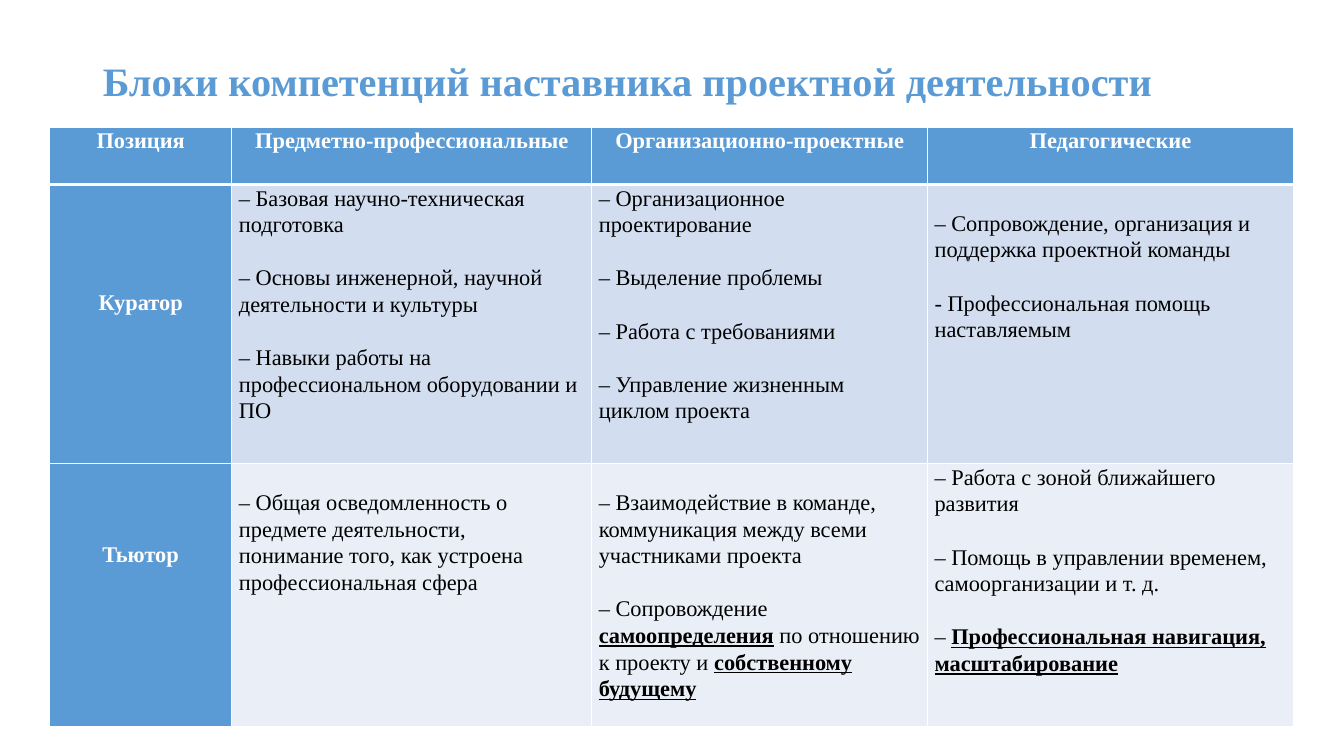
from lxml.etree import SubElement
from pptx import Presentation
from pptx.dml.color import RGBColor
from pptx.enum.text import MSO_ANCHOR, PP_ALIGN
from pptx.oxml.ns import qn
from pptx.util import Inches, Pt

BLUE = RGBColor(0x5B, 0x9B, 0xD5)
PALE_BLUE = RGBColor(0xD2, 0xDE, 0xEF)
PALEST_BLUE = RGBColor(0xEA, 0xEF, 0xF7)
WHITE = RGBColor(0xFF, 0xFF, 0xFF)
BLACK = RGBColor(0, 0, 0)
FONT = "Times New Roman"

COLUMN_WIDTHS = [1.81, 3.57, 3.33, 3.63]
ROW_HEIGHTS = [0.57, 2.77, 2.61]
ROW_FILLS = [BLUE, PALE_BLUE, PALEST_BLUE]
TOP_MARGINS = [[0, 0, 0, 0], [1.04, 0, 0, 0.25], [0.77, 0.25, 0.25, 0]]

# Asterisks enclose the emphasised words.
COMPETENCIES = [
    [
        ["Позиция"],
        ["Предметно-профессиональные"],
        ["Организационно-проектные"],
        ["Педагогические"],
    ],
    [
        ["Куратор"],
        [
            "– Базовая научно-техническая подготовка",
            "– Основы инженерной, научной деятельности и культуры",
            "– Навыки работы на профессиональном оборудовании и ПО",
        ],
        [
            "– Организационное проектирование",
            "– Выделение проблемы",
            "– Работа с требованиями",
            "– Управление жизненным циклом проекта",
        ],
        [
            "– Сопровождение, организация и поддержка проектной команды",
            "- Профессиональная помощь наставляемым",
        ],
    ],
    [
        ["Тьютор"],
        [
            "– Общая осведомленность о предмете деятельности,",
            "понимание того, как устроена профессиональная сфера",
        ],
        [
            "– Взаимодействие в команде, коммуникация между всеми участниками проекта",
            "– Сопровождение *самоопределения* по отношению к проекту и *собственному будущему*",
        ],
        [
            "– Работа с зоной ближайшего развития",
            "– Помощь в управлении временем, самоорганизации и т. д.",
            "– *Профессиональная навигация, масштабирование*",
        ],
    ],
]


def add_run(paragraph, text, size, color, bold, underline=False):
    run = paragraph.add_run()
    run.text = text
    run.font.name = FONT
    run.font.size = Pt(size)
    run.font.color.rgb = color
    run.font.bold = bold
    run.font.underline = underline


def add_border(cell, side, width):
    line = SubElement(cell._tc.get_or_add_tcPr(), qn(f"a:ln{side}"), w=str(Pt(width)))
    fill = SubElement(line, qn("a:solidFill"))
    SubElement(fill, qn("a:srgbClr"), val=str(WHITE))


prs = Presentation()
prs.slide_width = Inches(13.33)
prs.slide_height = Inches(7.5)
slide = prs.slides.add_slide(prs.slide_layouts[5])

title = slide.shapes.title
title.left, title.top = Inches(0.92), Inches(0.4)
title.width, title.height = Inches(11.5), Inches(0.86)
title.text_frame.vertical_anchor = MSO_ANCHOR.MIDDLE
heading = title.text_frame.paragraphs[0]
heading.alignment = PP_ALIGN.LEFT
heading.line_spacing = 0.9
add_run(heading, "Блоки компетенций наставника проектной деятельности", 28.8, BLUE, True)

matrix = slide.shapes.add_table(
    len(ROW_HEIGHTS), len(COLUMN_WIDTHS),
    Inches(0.49), Inches(1.26), Inches(sum(COLUMN_WIDTHS)), Inches(sum(ROW_HEIGHTS)),
).table
for column, width in zip(matrix.columns, COLUMN_WIDTHS):
    column.width = Inches(width)
for row, height in zip(matrix.rows, ROW_HEIGHTS):
    row.height = Inches(height)

for r, positions in enumerate(COMPETENCIES):
    for c, items in enumerate(positions):
        cell = matrix.cell(r, c)
        is_header = r == 0 or c == 0
        cell.margin_left = cell.margin_right = Inches(0.07)
        cell.margin_top = Inches(TOP_MARGINS[r][c])
        cell.margin_bottom = 0
        cell.vertical_anchor = MSO_ANCHOR.TOP
        for side in "LRTB":
            meets_header_rule = (r, side) in [(0, "B"), (1, "T")]
            add_border(cell, side, 3 if meets_header_rule else 1)
        cell.fill.solid()
        cell.fill.fore_color.rgb = BLUE if is_header else ROW_FILLS[r]

        for i, item in enumerate(items):
            frame = cell.text_frame
            paragraph = frame.add_paragraph() if i else frame.paragraphs[0]
            paragraph.alignment = PP_ALIGN.CENTER if is_header else PP_ALIGN.LEFT
            paragraph.line_spacing = 1.07
            if i and item.startswith(("–", "-")):
                paragraph.space_before = Pt(19)
            for part, words in enumerate(item.split("*")):
                emphasised = part % 2 == 1
                if words:
                    add_run(paragraph, words, 16, WHITE if is_header else BLACK,
                            is_header or emphasised, emphasised)

prs.save("out.pptx")
